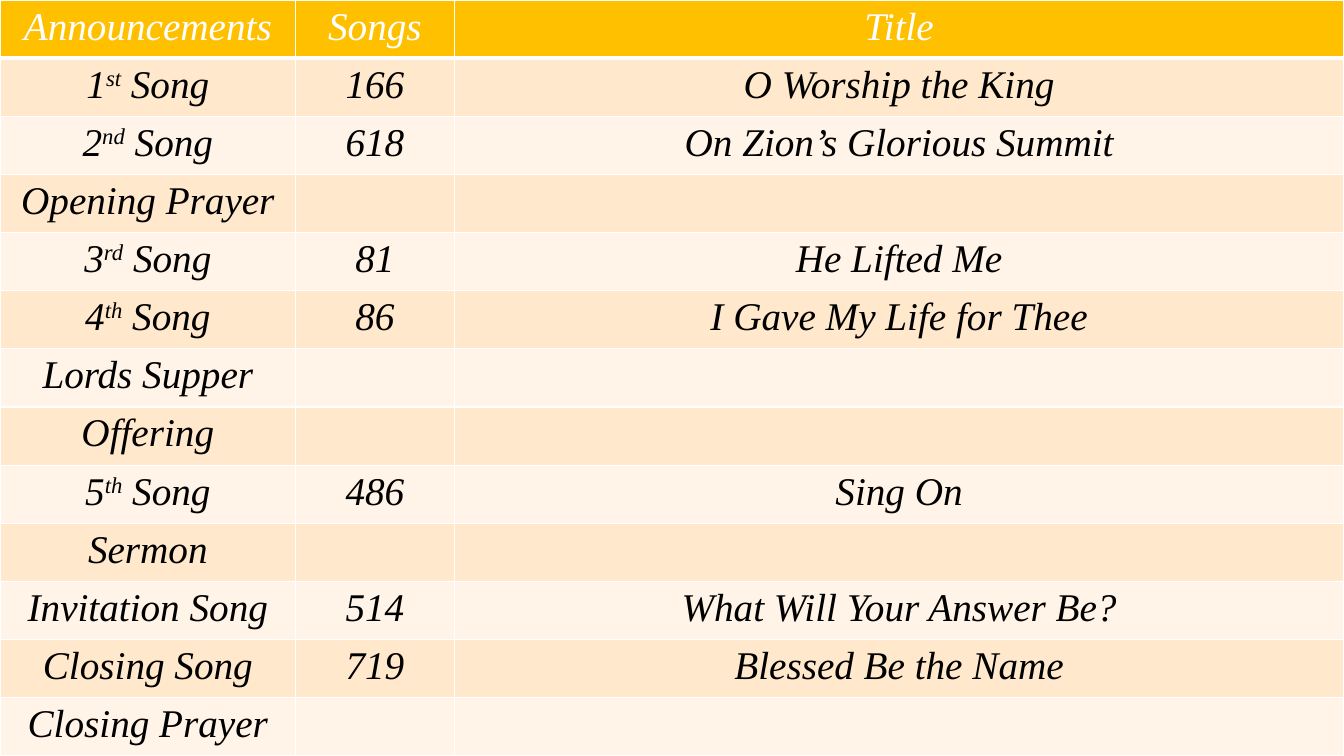
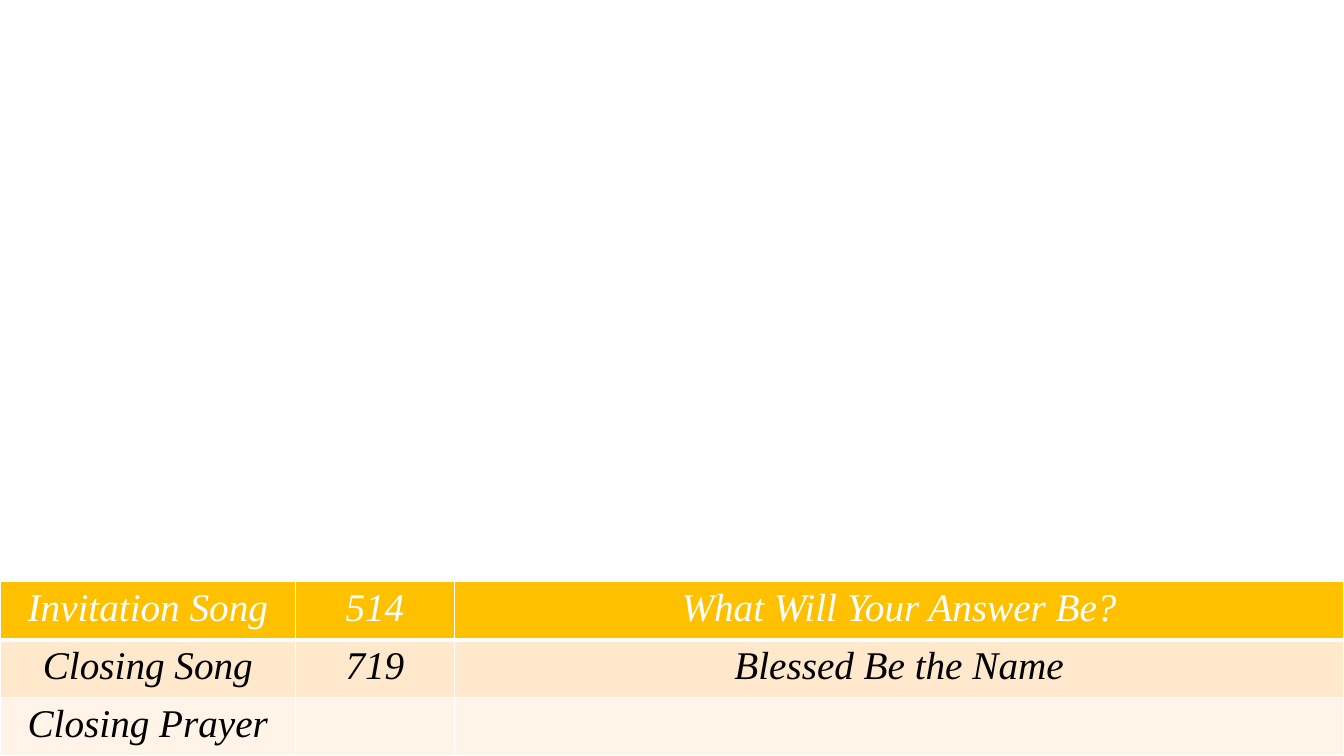
from lxml import etree
from pptx import Presentation
from pptx.dml.color import RGBColor
from pptx.enum.text import PP_ALIGN
from pptx.oxml.ns import qn
from pptx.util import Inches, Pt

CENTER = PP_ALIGN.CENTER
BLANK_LAYOUT = 6
SLIDE_WIDTH = Inches(13.33)
SLIDE_HEIGHT = Inches(7.5)
GRID_ROWS = 13
COLUMN_SHARES = (0.22, 0.118, 0.662)
FONT_NAME = "Times New Roman"
FONT_SIZE = Pt(28)
THIN, THICK = Pt(1), Pt(3)
COLORS = {
    "white": "FFFFFF",
    "black": "000000",
    "header": "FFC000",
    "odd_row": "FFE8CC",
    "even_row": "FFF4E7",
}

HEADINGS = ("Announcements", "Songs", "Title")
CLOSING_ROWS = [
    ("Invitation Song", "514", "What Will Your Answer Be?"),
    ("Closing Song", "719", "Blessed Be the Name"),
    ("Closing Prayer", "", ""),
]
SERVICE_ROWS = [
    HEADINGS,
    ("1^st^ Song", "166", "O Worship the King"),
    ("2^nd^ Song", "618", "On Zion’s Glorious Summit"),
    ("Opening Prayer", "", ""),
    ("3^rd^ Song", "81", "He Lifted Me"),
    ("4^th^ Song", "86", "I Gave My Life for Thee"),
    ("Lords Supper", "", ""),
    ("Offering", "", ""),
    ("5^th^ Song", "486", "Sing On"),
    ("Sermon", "", ""),
] + CLOSING_ROWS


def add_borders(cell, bottom_width):
    properties = cell._tc.get_or_add_tcPr()
    widths = {"a:lnL": THIN, "a:lnR": THIN, "a:lnT": THIN, "a:lnB": bottom_width}
    for tag, width in widths.items():
        line = etree.SubElement(properties, qn(tag), w=str(width))
        fill = etree.SubElement(line, qn("a:solidFill"))
        etree.SubElement(fill, qn("a:srgbClr"), val=COLORS["white"])


def write_cell(cell, text, color):
    paragraph = cell.text_frame.paragraphs[0]
    paragraph.alignment = CENTER
    for index, part in enumerate(text.split("^") if text else []):
        run = paragraph.add_run()
        run.text = part
        run.font.name = FONT_NAME
        run.font.size = FONT_SIZE
        run.font.italic = True
        run.font.bold = False
        run.font.color.rgb = RGBColor.from_string(color)
        if index % 2:
            run._r.get_or_add_rPr().set("baseline", "30000")


def style_cell(cell, text, row_index):
    is_header = row_index == 0
    fill_name = "header" if is_header else "odd_row" if row_index % 2 else "even_row"
    add_borders(cell, THICK if is_header else THIN)
    cell.fill.solid()
    cell.fill.fore_color.rgb = RGBColor.from_string(COLORS[fill_name])
    write_cell(cell, text, COLORS["white" if is_header else "black"])


def add_program_table(slide, rows, left, top, width, height):
    frame = slide.shapes.add_table(
        len(rows), len(COLUMN_SHARES), left, top, width, height)
    table = frame.table
    for column, share in zip(table.columns, COLUMN_SHARES):
        column.width = int(width * share)
    for row_index, texts in enumerate(rows):
        table.rows[row_index].height = height // len(rows)
        for column_index, text in enumerate(texts):
            style_cell(table.cell(row_index, column_index), text, row_index)


def add_program_slide(presentation, rows):
    slide = presentation.slides.add_slide(presentation.slide_layouts[BLANK_LAYOUT])
    height = SLIDE_HEIGHT * len(rows) // GRID_ROWS
    add_program_table(slide, rows, 0, SLIDE_HEIGHT - height, SLIDE_WIDTH, height)


def main():
    presentation = Presentation()
    presentation.slide_width = SLIDE_WIDTH
    presentation.slide_height = SLIDE_HEIGHT
    for rows in (SERVICE_ROWS, CLOSING_ROWS):
        add_program_slide(presentation, rows)
    presentation.save("out.pptx")


if __name__ == "__main__":
    main()
